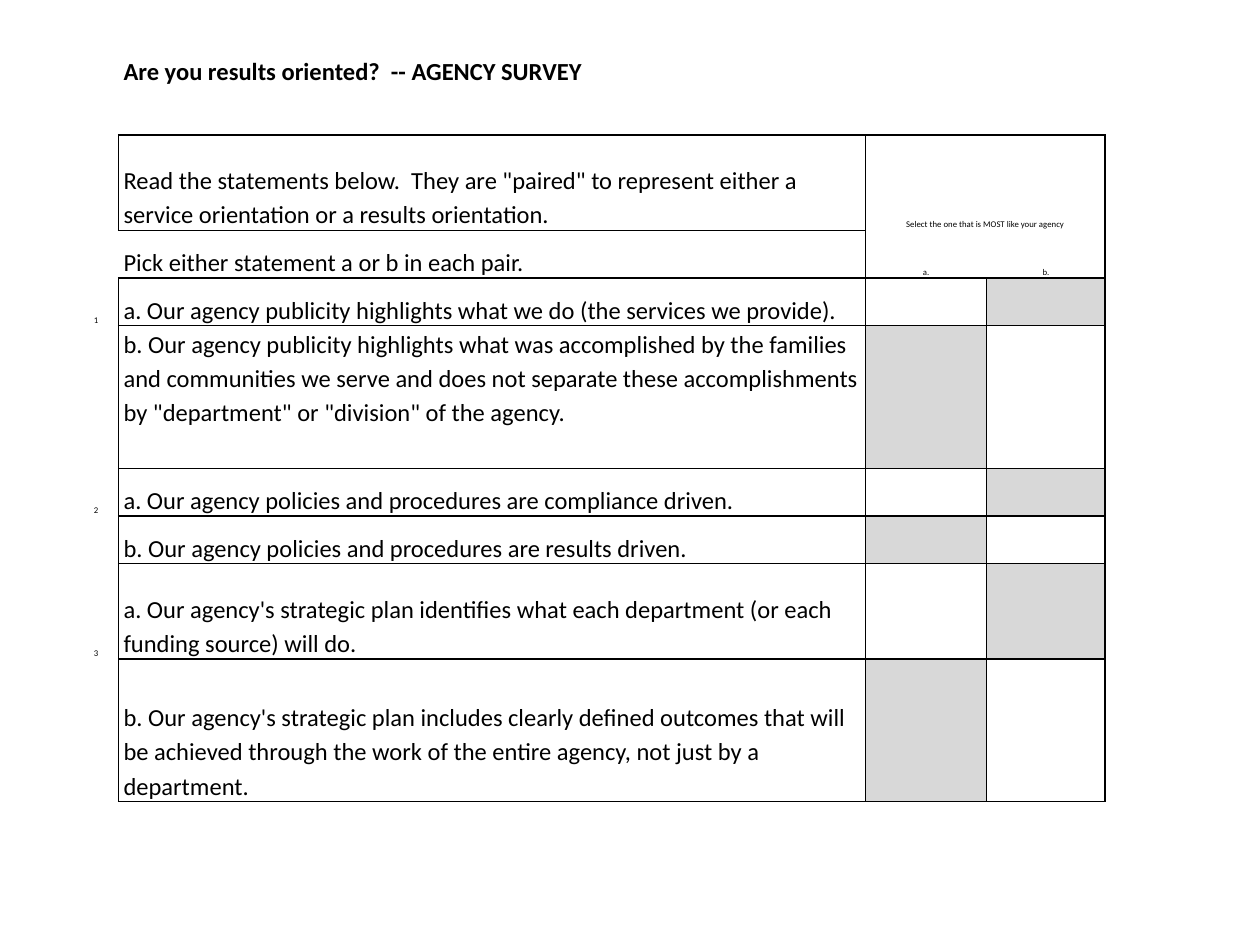
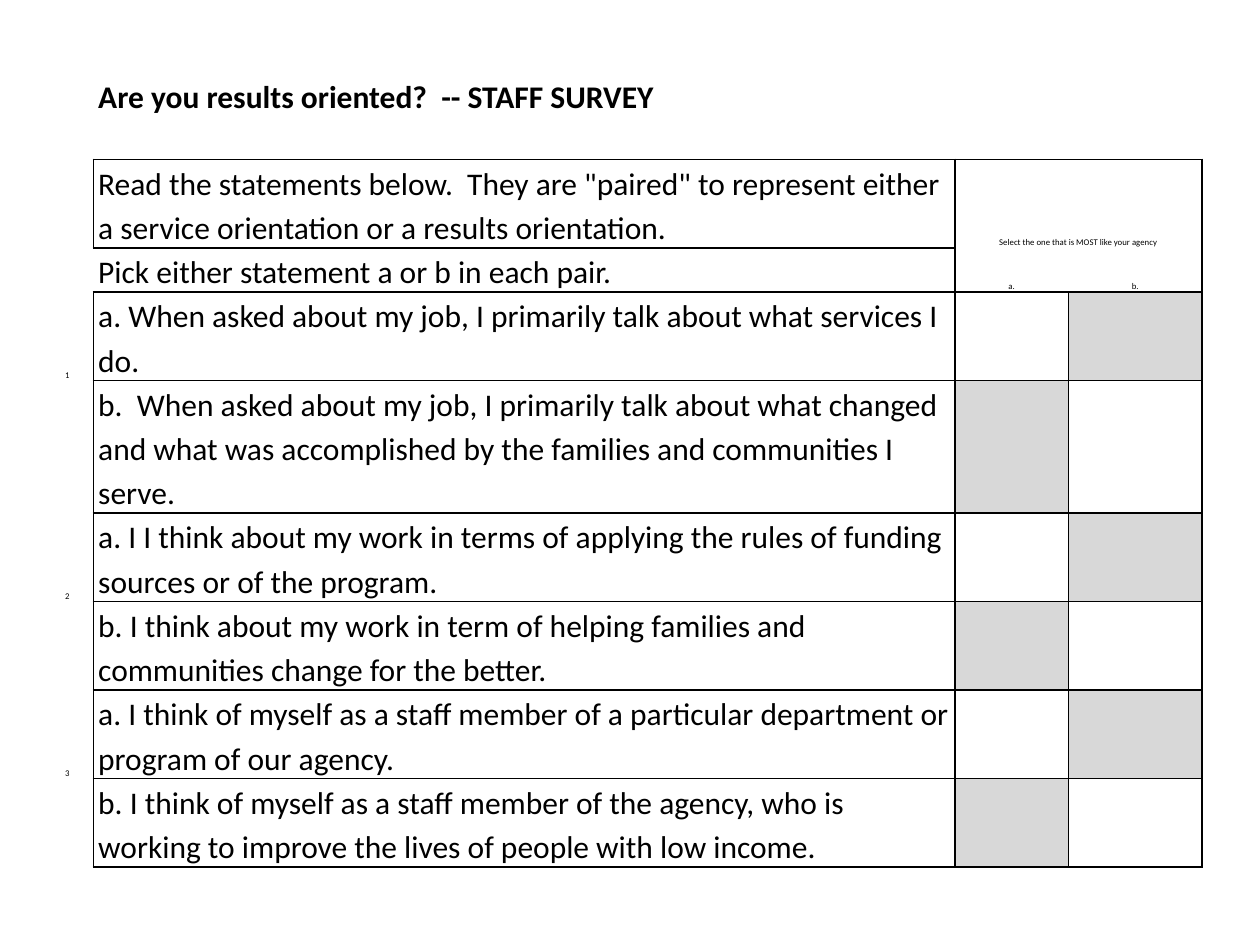
"""Build two slides that each hold a paired-statement survey table."""
import dataclasses

import lxml.etree
import pptx
import pptx.dml.color
import pptx.enum.text
import pptx.oxml.ns
import pptx.util

Cm, Pt = pptx.util.Cm, pptx.util.Pt
ANCHOR, ALIGN = pptx.enum.text.MSO_ANCHOR, pptx.enum.text.PP_ALIGN
qn = pptx.oxml.ns.qn


@dataclasses.dataclass(frozen=True)
class Theme:
    """Colours, type and line settings shared by the slides."""
    ink: str = "000000"
    shade: str = "D8D8D8"
    font: str = "Calibri"
    small: int = 5
    leading: float = 1.15
    rule: float = 1
    inset: float = 0.1


@dataclasses.dataclass(frozen=True)
class Survey:
    """Wording and measures (cm and points) of one survey slide."""
    name: str
    size: int
    box: tuple
    cols: tuple
    top_row: float
    line: float
    lines: tuple
    statements: tuple


THEME = Theme()
INTRO = ('Read the statements below.  They are "paired" to represent either a '
         'service orientation or a results orientation.')
PICK = "Pick either statement a or b in each pair."
SELECT = "Select the one that is MOST like your agency"
NUMBER, STATEMENT, ANSWER_A, ANSWER_B, MARGIN, EDGE = range(6)
TITLE_ROW, GAP_ROW, INTRO_ROW, PICK_ROW, FIRST_ROW = range(5)

AGENCY = Survey(
    "AGENCY", 14, (1.48, 1.07), (0.91, 15.06, 2.44, 2.39, 0.41, 0.64),
    0.41, 0.96, (1, 2, 1, 1, 3, 1, 1, 2, 3),
    ("a. Our agency publicity highlights what we do (the services we provide).",
     "b. Our agency publicity highlights what was accomplished by the families "
     "and communities we serve and does not separate these accomplishments by "
     '"department" or "division" of the agency.',
     "a. Our agency policies and procedures are compliance driven.",
     "b. Our agency policies and procedures are results driven.",
     "a. Our agency's strategic plan identifies what each department (or each "
     "funding source) will do.",
     "b. Our agency's strategic plan includes clearly defined outcomes that will "
     "be achieved through the work of the entire agency, not just by a department."))
STAFF = Survey(
    "STAFF", 18, (0.84, 1.47), (1.04, 17.37, 2.29, 2.69, 0.46, 0.71),
    0.85, 0.85, (1, 2, 1, 2, 3, 2, 2, 2, 2),
    ("a. When asked about my job, I primarily talk about what services I do.",
     "b.  When asked about my job, I primarily talk about what changed and what "
     "was accomplished by the families and communities I serve.",
     "a. I I think about my work in terms of applying the rules of funding "
     "sources or of the program.",
     "b. I think about my work in term of helping families and communities "
     "change for the better.",
     "a. I think of myself as a staff member of a particular department or "
     "program of our agency.",
     "b. I think of myself as a staff member of the agency, who is working to "
     "improve the lives of people with low income."))


def write(cell, text, *, size=THEME.small, bold=False, align=ALIGN.LEFT,
          anchor=ANCHOR.BOTTOM):
    """Put formatted text in a cell."""
    cell.vertical_anchor = anchor
    p = cell.text_frame.paragraphs[0]
    p.alignment, p.line_spacing = align, THEME.leading
    r = p.add_run()
    r.text = text
    r.font.name, r.font.size, r.font.bold = THEME.font, Pt(size), bold
    r.font.color.rgb = pptx.dml.color.RGBColor.from_string(THEME.ink)


def ruled_sides(row, col):
    """Return the ruled sides of a cell as letters from LRTB."""
    if row == TITLE_ROW or col == EDGE:
        return ""
    if row == GAP_ROW:
        return "B" if STATEMENT <= col <= ANSWER_B else ""
    if col == NUMBER:
        return "" if row == PICK_ROW else "R"
    if col == MARGIN:
        return "L"
    if row == PICK_ROW:
        return {STATEMENT: "RTB", ANSWER_A: "LB", ANSWER_B: "RB"}[col]
    return "LRT" if row == INTRO_ROW and col != STATEMENT else "LRTB"


def format_cell(cell, row, col):
    """Set the insets, borders, fill and empty-line size of a cell."""
    cell.margin_left = cell.margin_right = Cm(THEME.inset)
    cell.margin_top = cell.margin_bottom = 0
    tc_pr = cell._tc.get_or_add_tcPr()
    sides = ruled_sides(row, col)
    for side in "LRTB":
        ln = lxml.etree.SubElement(tc_pr, qn("a:ln" + side), w=str(Pt(THEME.rule)))
        if side in sides:
            fill = lxml.etree.SubElement(ln, qn("a:solidFill"))
            lxml.etree.SubElement(fill, qn("a:srgbClr"), val=THEME.ink)
        else:
            lxml.etree.SubElement(ln, qn("a:noFill"))
    shaded_col = ANSWER_B if (row - FIRST_ROW) % 2 == 0 else ANSWER_A
    if row >= FIRST_ROW and col == shaded_col:
        cell.fill.solid()
        cell.fill.fore_color.rgb = pptx.dml.color.RGBColor.from_string(THEME.shade)
    else:
        cell.fill.background()
    if not cell.text_frame.text:
        p = cell.text_frame.paragraphs[0]
        lxml.etree.SubElement(p._p, qn("a:endParaRPr"), sz=str(THEME.small * 100))


def fill_header(table, survey):
    """Write the title, instructions and answer headings."""
    write(table.cell(TITLE_ROW, STATEMENT),
          f"Are you results oriented?  -- {survey.name} SURVEY",
          size=survey.size, bold=True)
    write(table.cell(INTRO_ROW, STATEMENT), INTRO, size=survey.size)
    write(table.cell(PICK_ROW, STATEMENT), PICK, size=survey.size)
    write(table.cell(INTRO_ROW, ANSWER_A), SELECT, align=ALIGN.CENTER)
    for col, label in ((ANSWER_A, "a."), (ANSWER_B, "b.")):
        write(table.cell(PICK_ROW, col), label, align=ALIGN.CENTER)


def fill_statements(table, survey):
    """Write the paired statements and number each pair."""
    for i, statement in enumerate(survey.statements):
        row = FIRST_ROW + i
        write(table.cell(row, STATEMENT), statement, size=survey.size,
              anchor=ANCHOR.TOP if i == 1 else ANCHOR.BOTTOM)
        if i % 2 == 0:
            write(table.cell(row, NUMBER), str(i // 2 + 1), align=ALIGN.CENTER)


def merge_cells(table):
    """Join the heading cells and the margin columns."""
    for row in (TITLE_ROW, GAP_ROW):
        table.cell(row, ANSWER_A).merge(table.cell(row, MARGIN))
    table.cell(INTRO_ROW, ANSWER_A).merge(table.cell(INTRO_ROW, ANSWER_B))
    for row in range(INTRO_ROW, len(table.rows)):
        table.cell(row, MARGIN).merge(table.cell(row, EDGE))


def add_survey(prs, survey):
    """Add a slide with one survey table."""
    s = prs.slides.add_slide(prs.slide_layouts[6])
    heights = [survey.top_row] + [n * survey.line for n in survey.lines]
    left, top = survey.box
    table = s.shapes.add_table(
        len(heights), len(survey.cols), Cm(left), Cm(top),
        Cm(sum(survey.cols)), Cm(sum(heights))).table
    table.first_row = table.horz_banding = False
    for column, width in zip(table.columns, survey.cols):
        column.width = Cm(width)
    for row, height in zip(table.rows, heights):
        row.height = Cm(height)
    merge_cells(table)
    fill_header(table, survey)
    fill_statements(table, survey)
    for row in range(len(heights)):
        for col in range(len(survey.cols)):
            format_cell(table.cell(row, col), row, col)


def main():
    """Build and save the presentation."""
    prs = pptx.Presentation()
    prs.slide_width, prs.slide_height = Cm(25.4), Cm(19.05)
    for survey in (AGENCY, STAFF):
        add_survey(prs, survey)
    prs.save("out.pptx")


if __name__ == "__main__":
    main()
